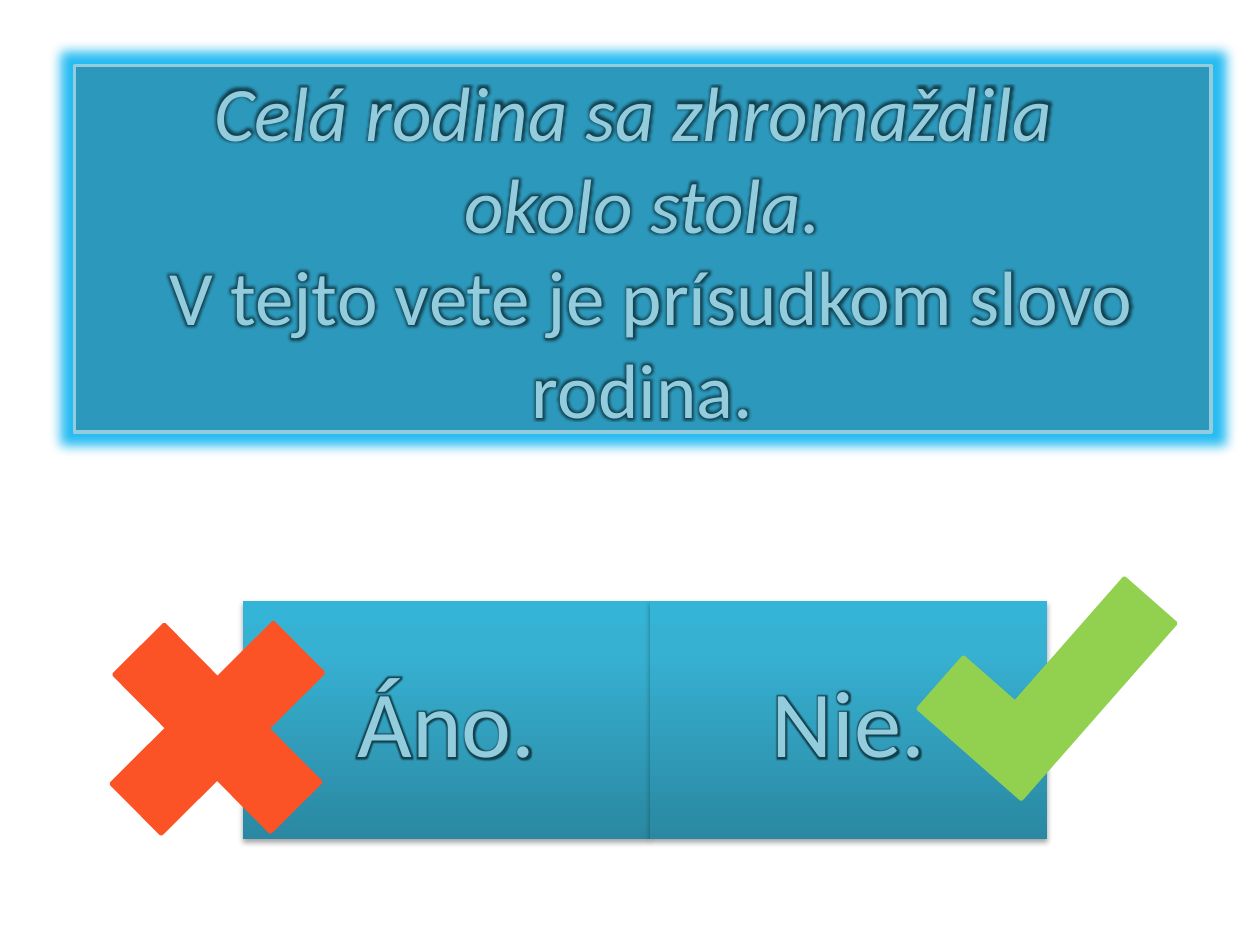
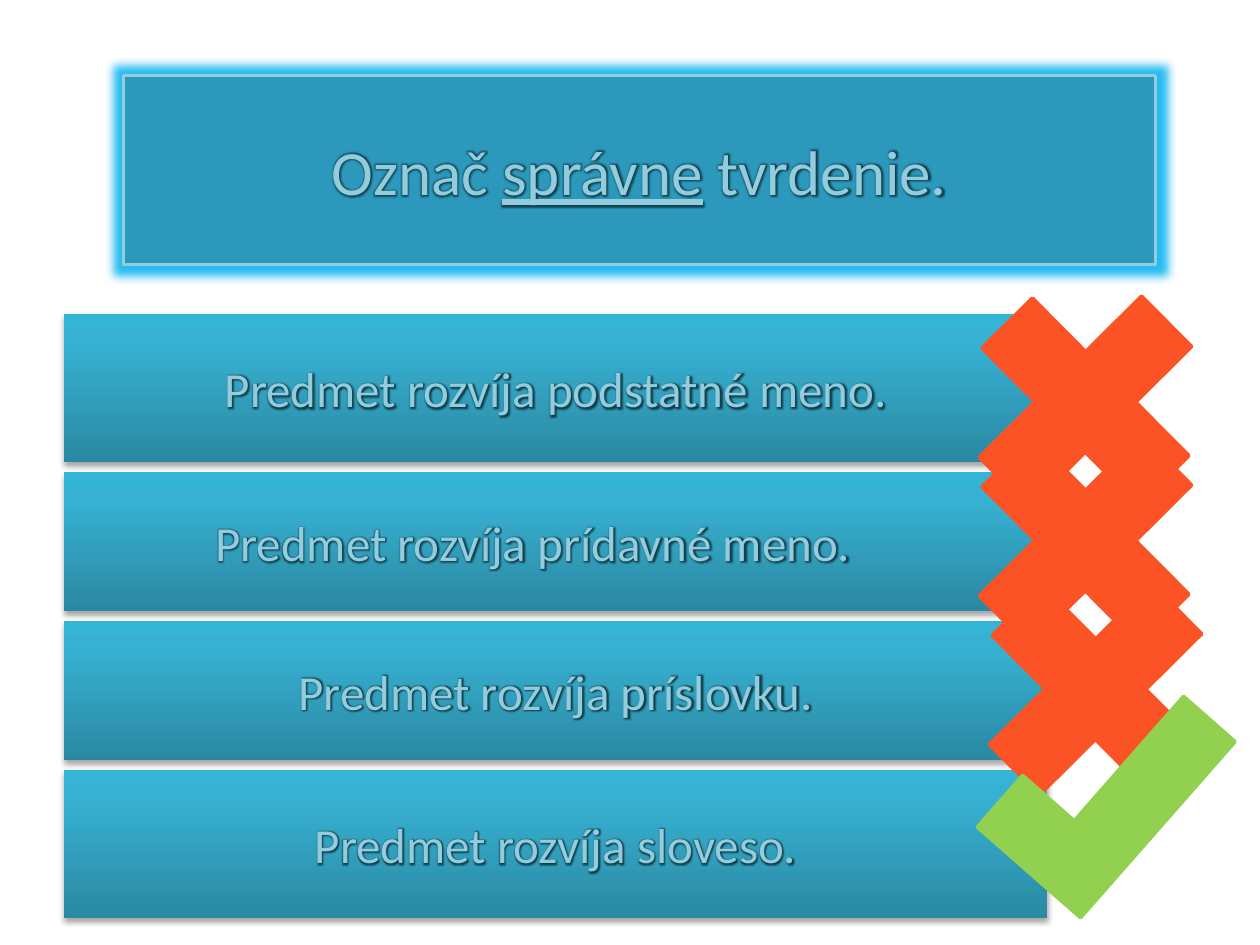
import pptx
import pptx.dml.color
import pptx.enum.shapes
import pptx.enum.text
import pptx.oxml
import pptx.oxml.ns
import pptx.util
from dataclasses import dataclass

MSO = pptx.enum.shapes.MSO_SHAPE
NS = 'xmlns:a="http://schemas.openxmlformats.org/drawingml/2006/main"'


@dataclass(frozen=True)
class Theme:
    font: str = "Calibri"
    text: str = "93CDDD"
    halo: str = "0B2A33"
    panel: str = "31859C"
    panel_opacity: int = 63
    glow: str = "00B0F0"
    wrong: str = "FB5325"
    right: str = "92D050"
    button: tuple = ((0, "2A88A2"), (80, "37B1D2"), (100, "34B4D6"))
    line: float = 2
    statement: int = 44
    heading: int = 36
    choice: int = 54
    option: int = 28


T = Theme()

# Content: each paragraph is a list of (text, format) runs
STATEMENT = [
    [("Celá rodina sa zhromaždila ", {"italic": True})],
    [("okolo stola.", {"italic": True})],
    [(" V tejto vete je prísudkom slovo rodina.", {})],
]
HEADING = [[("Označ ", {}), ("správne", {"underline": True}), (" tvrdenie.", {})]]

# Choices side by side: text, width
CHOICES = [("Áno.", 3.23), ("Nie.", 3.15)]
CHOICE_LEFT, CHOICE_TOP, CHOICE_HEIGHT = 1.93, 4.77, 1.89

# Options stacked: text, height, extra right inset
OPTIONS = [
    ("Predmet rozvíja podstatné meno.", 1.18, 0),
    ("Predmet rozvíja prídavné meno.", 1.1, 0.36),
    ("Predmet rozvíja príslovku.", 1.1, 0),
    ("Predmet rozvíja sloveso.", 1.18, 0),
]
OPTION_LEFT, OPTION_TOP, OPTION_WIDTH, OPTION_GAP = 0.51, 2.49, 7.8, 0.08

# Marks: kind -> preset, colour, width, height, rotation
MARKS = {
    "wrong": (MSO.MATH_PLUS, T.wrong, 2.47, 2.4, 315.2),
    "right": (MSO.CORNER, T.right, 1.86, 1.09, 311.3),
}
CHOICE_MARKS = [("wrong", 0.49, 4.58), ("right", 7.38, 4.74)]
OPTION_MARKS = [("wrong", 7.38, 1.99), ("wrong", 7.38, 3.09),
                ("wrong", 7.46, 4.27), ("right", 7.85, 5.68)]


# Helpers
def rgb(value):
    return pptx.dml.color.RGBColor.from_string(value)


def xml(markup):
    """Parse a drawing element whose opening tag is left without a namespace."""
    tag, rest = markup.split(" ", 1)
    return pptx.oxml.parse_xml(f"{tag} {NS} {rest}")


def color_xml(value, opacity=100):
    return f'<a:srgbClr val="{value}"><a:alpha val="{opacity * 1000}"/></a:srgbClr>'


def glow_xml(value, radius, opacity):
    return (f'<a:glow rad="{pptx.util.Pt(radius)}">'
            f'{color_xml(value, opacity)}</a:glow>')


def place(sp, left, top, width, height):
    sp.left, sp.top, sp.width, sp.height = map(
        pptx.util.Inches, (left, top, width, height))


def set_effect(sp, effect):
    sp.shadow.inherit = False
    effects = sp._element.spPr.find(pptx.oxml.ns.qn("a:effectLst"))
    effects.append(xml(effect.replace(" ", " ", 1)))


def add_text(sp, paragraphs, size, extra_right=0):
    """Write centred outlined text with a dark halo."""
    tf = sp.text_frame
    tf.word_wrap = True
    tf.auto_size = pptx.enum.text.MSO_AUTO_SIZE.NONE
    tf.vertical_anchor = pptx.enum.text.MSO_ANCHOR.MIDDLE
    tf.margin_right = pptx.util.Inches(0.1 + extra_right)
    for i, runs in enumerate(paragraphs):
        p = tf.add_paragraph() if i else tf.paragraphs[0]
        p.alignment = pptx.enum.text.PP_ALIGN.CENTER
        for text, style in runs:
            r = p.add_run()
            r.text = text
            r.font.size = pptx.util.Pt(size)
            r.font.name = T.font
            r.font.color.rgb = rgb(T.text)
            r.font.italic = style.get("italic", False)
            r.font.underline = style.get("underline", False)
            rPr = r._r.get_or_add_rPr()
            rPr.insert(0, xml(f'<a:ln w="{pptx.util.Pt(0.75)}"><a:solidFill>'
                              f'{color_xml(T.text)}</a:solidFill></a:ln>'))
            rPr.insert(2, xml(f'<a:effectLst >{glow_xml(T.halo, 3.5, 80)}'
                              '</a:effectLst>'))


def add_panel(slide, box, paragraphs, size, glow):
    """Turn the title into a translucent glowing panel."""
    sp = slide.shapes.title
    place(sp, *box)
    sp.fill.solid()
    sp.fill.fore_color.rgb = rgb(T.panel)
    color = sp._element.spPr.find(".//" + pptx.oxml.ns.qn("a:srgbClr"))
    color.append(xml(f'<a:alpha val="{T.panel_opacity * 1000}"/>'))
    sp.line.color.rgb = rgb(T.text)
    sp.line.width = pptx.util.Pt(T.line)
    set_effect(sp, glow_xml(T.glow, glow, 85))
    add_text(sp, paragraphs, size)


def add_button(slide, box, text, size, extra_right=0):
    sp = slide.shapes.add_shape(MSO.RECTANGLE, 0, 0, 0, 0)
    place(sp, *box)
    sp.fill.gradient()
    spPr = sp._element.spPr
    stops = "".join(f'<a:gs pos="{pos * 1000}">{color_xml(c)}</a:gs>'
                    for pos, c in T.button)
    spPr.replace(spPr.find(pptx.oxml.ns.qn("a:gradFill")),
                 xml(f'<a:gradFill rotWithShape="1"><a:gsLst>{stops}</a:gsLst>'
                     '<a:lin ang="16200000" scaled="0"/></a:gradFill>'))
    sp.line.fill.background()
    set_effect(sp, f'<a:outerShdw blurRad="{pptx.util.Pt(3.1)}" '
                   f'dist="{pptx.util.Pt(1.8)}" dir="5400000" rotWithShape="0">'
                   f'{color_xml("000000", 35)}</a:outerShdw>')
    add_text(sp, [[(text, {})]], size, extra_right)


def add_marks(slide, marks):
    for kind, left, top in marks:
        preset, color, width, height, rotation = MARKS[kind]
        sp = slide.shapes.add_shape(preset, 0, 0, 0, 0)
        place(sp, left, top, width, height)
        sp.rotation = rotation
        sp.shadow.inherit = False
        sp.fill.solid()
        sp.fill.fore_color.rgb = rgb(color)
        sp.line.color.rgb = rgb(color)
        sp.line.width = pptx.util.Pt(T.line)


def build_choice_slide(prs):
    slide = prs.slides.add_slide(prs.slide_layouts[5])
    add_panel(slide, (0.59, 0.52, 9.02, 2.91), STATEMENT, T.statement, 14)
    left = CHOICE_LEFT
    for text, width in CHOICES:
        add_button(slide, (left, CHOICE_TOP, width, CHOICE_HEIGHT), text, T.choice)
        left += width
    add_marks(slide, CHOICE_MARKS)


def build_option_slide(prs):
    slide = prs.slides.add_slide(prs.slide_layouts[5])
    add_panel(slide, (0.98, 0.6, 8.19, 1.5), HEADING, T.heading, 11)
    top = OPTION_TOP
    for text, height, extra_right in OPTIONS:
        add_button(slide, (OPTION_LEFT, top, OPTION_WIDTH, height), text,
                   T.option, extra_right)
        top += height + OPTION_GAP
    add_marks(slide, OPTION_MARKS)


def main():
    prs = pptx.Presentation()
    prs.slide_width = pptx.util.Inches(10)
    prs.slide_height = pptx.util.Inches(7.5)
    build_choice_slide(prs)
    build_option_slide(prs)
    prs.save("out.pptx")


if __name__ == "__main__":
    main()
